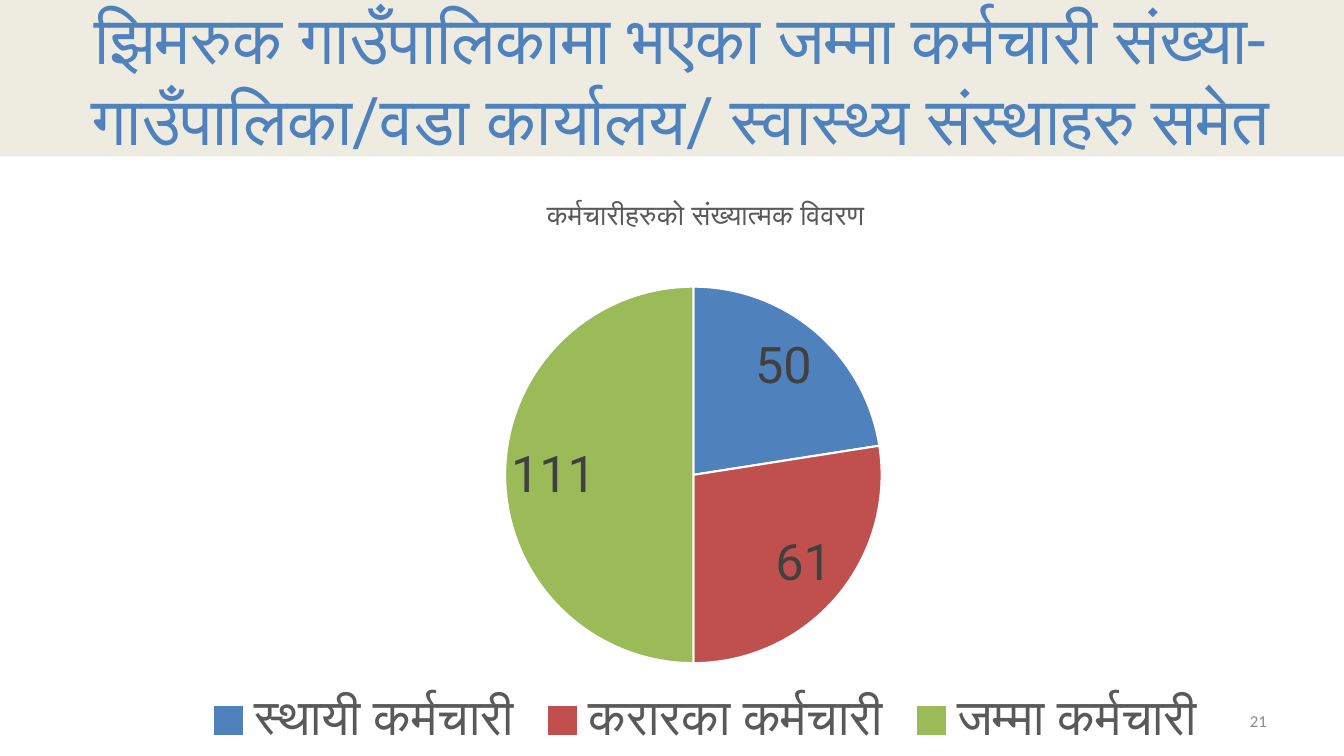
from lxml import etree
from pptx import Presentation
from pptx import util as u
from pptx.chart.data import CategoryChartData
from pptx.dml.color import RGBColor
from pptx.enum import chart as kinds, shapes, text

BLUE = RGBColor(0x4F, 0x81, 0xBD)
RED = RGBColor(0xC0, 0x50, 0x4D)
GREEN = RGBColor(0x9B, 0xBB, 0x59)
CREAM = RGBColor(0xEE, 0xEC, 0xE1)
WHITE = RGBColor(0xFF, 0xFF, 0xFF)
DARK = RGBColor(0x40, 0x40, 0x40)
GREY = RGBColor(0x59, 0x59, 0x59)
PALE = RGBColor(0x8C, 0x8C, 0x8C)

STAFF = {
    "स्थायी कर्मचारी": (50, BLUE),
    "करारका कर्मचारी": (61, RED),
    "जम्मा कर्मचारी": (111, GREEN),
}


def set_font(font, name, size, color):
    font.name = name
    font.size = u.Pt(size)
    font.bold = False
    font.color.rgb = color


def write(shape, words, align, name, size, color):
    frame = shape.text_frame
    frame.word_wrap = True
    frame.vertical_anchor = text.MSO_ANCHOR.MIDDLE
    para = frame.paragraphs[0]
    para.text = words
    para.alignment = align
    set_font(para.font, name, size, color)


def add_banner(page, words):
    banner = page.shapes.add_shape(
        shapes.MSO_SHAPE.RECTANGLE, 0, 0, u.Cm(34.29), u.Cm(3.94))
    banner.shadow.inherit = False
    banner.fill.solid()
    banner.fill.fore_color.rgb = CREAM
    banner.line.fill.background()
    write(banner, words, text.PP_ALIGN.CENTER, "Roboto", 48, BLUE)


def place_plot(chart, **fractions):
    area = chart.plots[0]._element.getparent()
    namespace = etree.QName(area).namespace
    for old in area.findall(f"{{{namespace}}}layout"):
        area.remove(old)
    layout = etree.Element(f"{{{namespace}}}layout")
    manual = etree.SubElement(layout, f"{{{namespace}}}manualLayout")
    settings = {"layoutTarget": "inner", "xMode": "edge", "yMode": "edge", **fractions}
    for tag, value in settings.items():
        etree.SubElement(manual, f"{{{namespace}}}{tag}").set("val", str(value))
    area.insert(0, layout)


def add_staff_pie(page, heading):
    data = CategoryChartData()
    data.categories = list(STAFF)
    data.add_series("Series 1", [count for count, color in STAFF.values()])
    chart = page.shapes.add_chart(
        kinds.XL_CHART_TYPE.PIE, u.Cm(2.54), u.Cm(4.45), u.Cm(30.48), u.Cm(14.6), data).chart
    set_font(chart.font, "Calibri", 10, GREY)

    chart.has_title = True
    title = chart.chart_title.text_frame.paragraphs[0]
    title.text = heading
    set_font(title.font, "Calibri", 20, GREY)

    chart.has_legend = True
    chart.legend.position = kinds.XL_LEGEND_POSITION.BOTTOM
    chart.legend.include_in_layout = False
    set_font(chart.legend.font, "Roboto", 36, GREY)

    plot = chart.plots[0]
    plot.vary_by_categories = True
    plot.has_data_labels = True
    labels = plot.data_labels
    labels.show_value = True
    labels.show_percentage = False
    labels.position = kinds.XL_LABEL_POSITION.INSIDE_END
    set_font(labels.font, "Roboto", 36, DARK)

    for index, (count, color) in enumerate(STAFF.values()):
        slice_format = plot.series[0].points[index].format
        slice_format.fill.solid()
        slice_format.fill.fore_color.rgb = color
        slice_format.line.color.rgb = WHITE
        slice_format.line.width = u.Pt(1.5)
    place_plot(chart, x=0.33, y=0.19, w=0.32, h=0.65)


def add_page_number(page, number):
    box = page.shapes.add_textbox(u.Cm(24.28), u.Cm(17.65), u.Cm(7.9), u.Cm(1.02))
    write(box, number, text.PP_ALIGN.RIGHT, "Calibri", 12, PALE)


def main():
    deck = Presentation()
    deck.slide_width, deck.slide_height = u.Cm(33.87), u.Cm(19.05)
    page = deck.slides.add_slide(deck.slide_layouts[6])
    add_banner(page, "झिमरुक गाउँपालिकामा भएका जम्मा कर्मचारी संख्या- "
                     "गाउँपालिका/वडा कार्यालय/ स्वास्थ्य संस्थाहरु समेत")
    add_staff_pie(page, "कर्मचारीहरुको संख्यात्मक विवरण")
    add_page_number(page, "21")
    deck.save("out.pptx")


if __name__ == "__main__":
    main()
